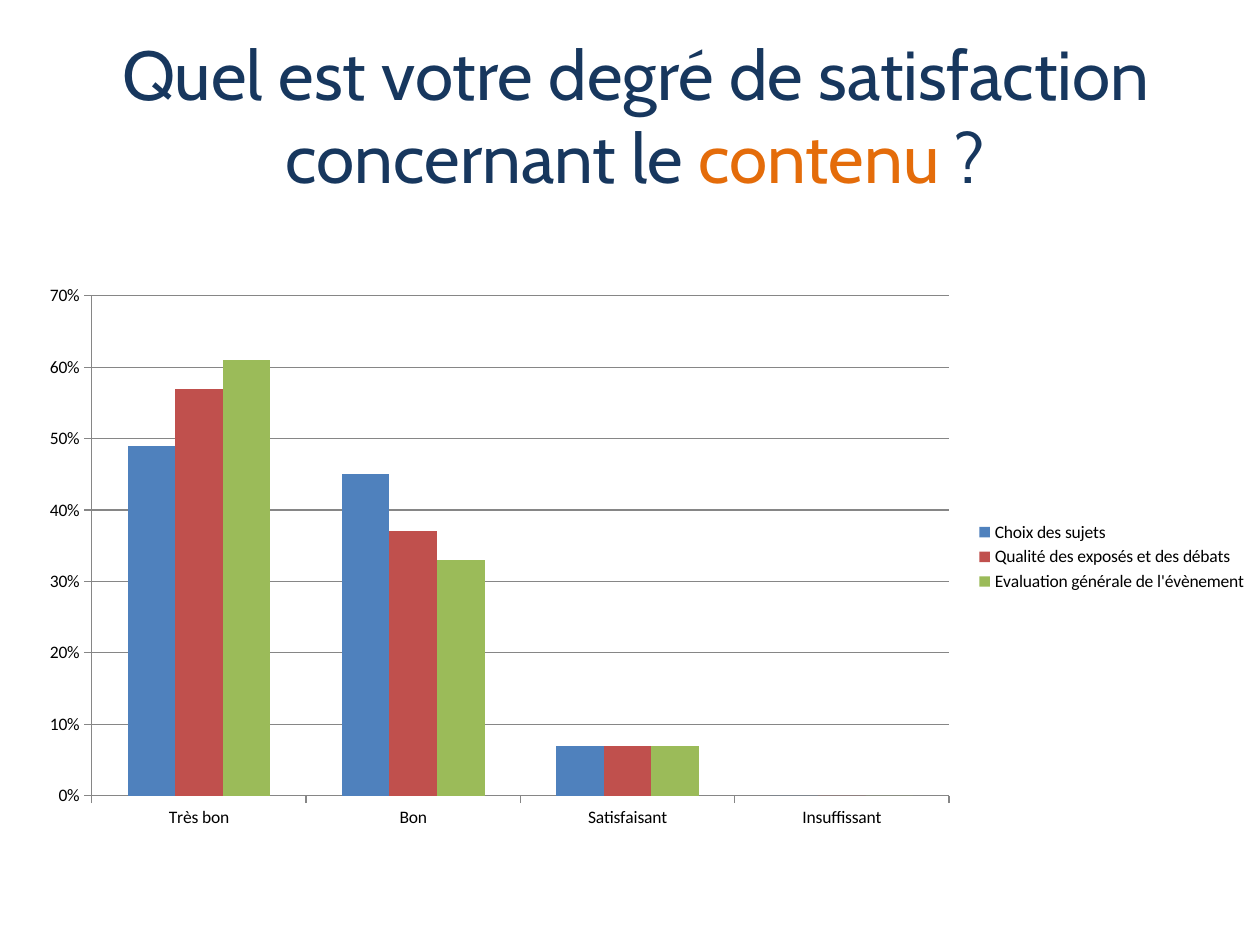
from pptx import Presentation
from pptx.chart.data import CategoryChartData
from pptx.dml.color import RGBColor
from pptx.enum.chart import XL_CHART_TYPE, XL_LEGEND_POSITION, XL_TICK_MARK
from pptx.enum.text import MSO_ANCHOR, MSO_AUTO_SIZE, PP_ALIGN
from pptx.util import Inches, Pt

CLUSTERED = XL_CHART_TYPE.COLUMN_CLUSTERED
LEGEND_RIGHT = XL_LEGEND_POSITION.RIGHT
TICK_OUTSIDE = XL_TICK_MARK.OUTSIDE
MIDDLE = MSO_ANCHOR.MIDDLE
CENTER = PP_ALIGN.CENTER
NO_AUTOFIT = MSO_AUTO_SIZE.NONE

COLORS = {
    "navy": "17375E",
    "orange": "E46C0A",
    "black": "000000",
    "axis": "868686",
    "blue": "4F81BD",
    "red": "C0504D",
    "green": "9BBB59",
}
TITLE_RUNS = [
    ("Quel est votre degré de satisfaction concernant le ", "navy"),
    ("contenu", "orange"),
    (" ?", "navy"),
]
RATINGS = ["Très bon", "Bon", "Satisfaisant", "Insuffissant"]
SERIES = [
    ("Choix des sujets", "blue", (0.49, 0.45, 0.07, 0)),
    ("Qualité des exposés et des débats", "red", (0.57, 0.37, 0.07, 0)),
    ("Evaluation générale de l'évènement", "green", (0.61, 0.33, 0.07, 0)),
]


def color(name):
    return RGBColor.from_string(COLORS[name])


presentation = Presentation()
presentation.slide_width = Inches(10)
presentation.slide_height = Inches(7.5)
width, height = presentation.slide_width, presentation.slide_height
slide = presentation.slides.add_slide(presentation.slide_layouts[5])

# Title
title = slide.shapes.title
title.left, title.top = Inches(0.28), Inches(0.61)
title.width, title.height = Inches(9.53), Inches(1.25)
text_frame = title.text_frame
text_frame.word_wrap = True
text_frame.auto_size = NO_AUTOFIT
text_frame.vertical_anchor = MIDDLE
text_frame.margin_bottom = Inches(0.71)  # lifts the two lines above the middle
paragraph = text_frame.paragraphs[0]
paragraph.alignment = CENTER
for text, color_name in TITLE_RUNS:
    run = paragraph.add_run()
    run.text = text
    run.font.name = "Cabin"
    run.font.size = Pt(39.6)
    run.font.color.rgb = color(color_name)

# Satisfaction chart
chart_data = CategoryChartData(number_format="0%")
chart_data.categories = RATINGS
for name, _, values in SERIES:
    chart_data.add_series(name, values)
chart = slide.shapes.add_chart(
    CLUSTERED, int(width * 0.02), Inches(2.18), int(width * 0.98), Inches(4.48), chart_data
).chart
chart.has_title = False
chart.font.name = "Calibri"
chart.font.size = Pt(10)
chart.font.color.rgb = color("black")
chart.has_legend = True
chart.legend.position = LEGEND_RIGHT
chart.legend.include_in_layout = False

plot = chart.plots[0]
plot.gap_width = 150
plot.overlap = 0
plot.vary_by_categories = False
for series, (_, color_name, _) in zip(plot.series, SERIES):
    series.format.fill.solid()
    series.format.fill.fore_color.rgb = color(color_name)

value_axis = chart.value_axis
value_axis.minimum_scale, value_axis.maximum_scale = 0, 0.7
value_axis.major_unit = 0.1
value_axis.has_major_gridlines = True
value_axis.tick_labels.number_format = "0%"
value_axis.tick_labels.number_format_is_linked = False
for axis in (chart.category_axis, value_axis):
    axis.major_tick_mark = TICK_OUTSIDE
for part in (chart.category_axis, value_axis, value_axis.major_gridlines):
    part.format.line.color.rgb = color("axis")
    part.format.line.width = Pt(0.75)

presentation.save("out.pptx")
